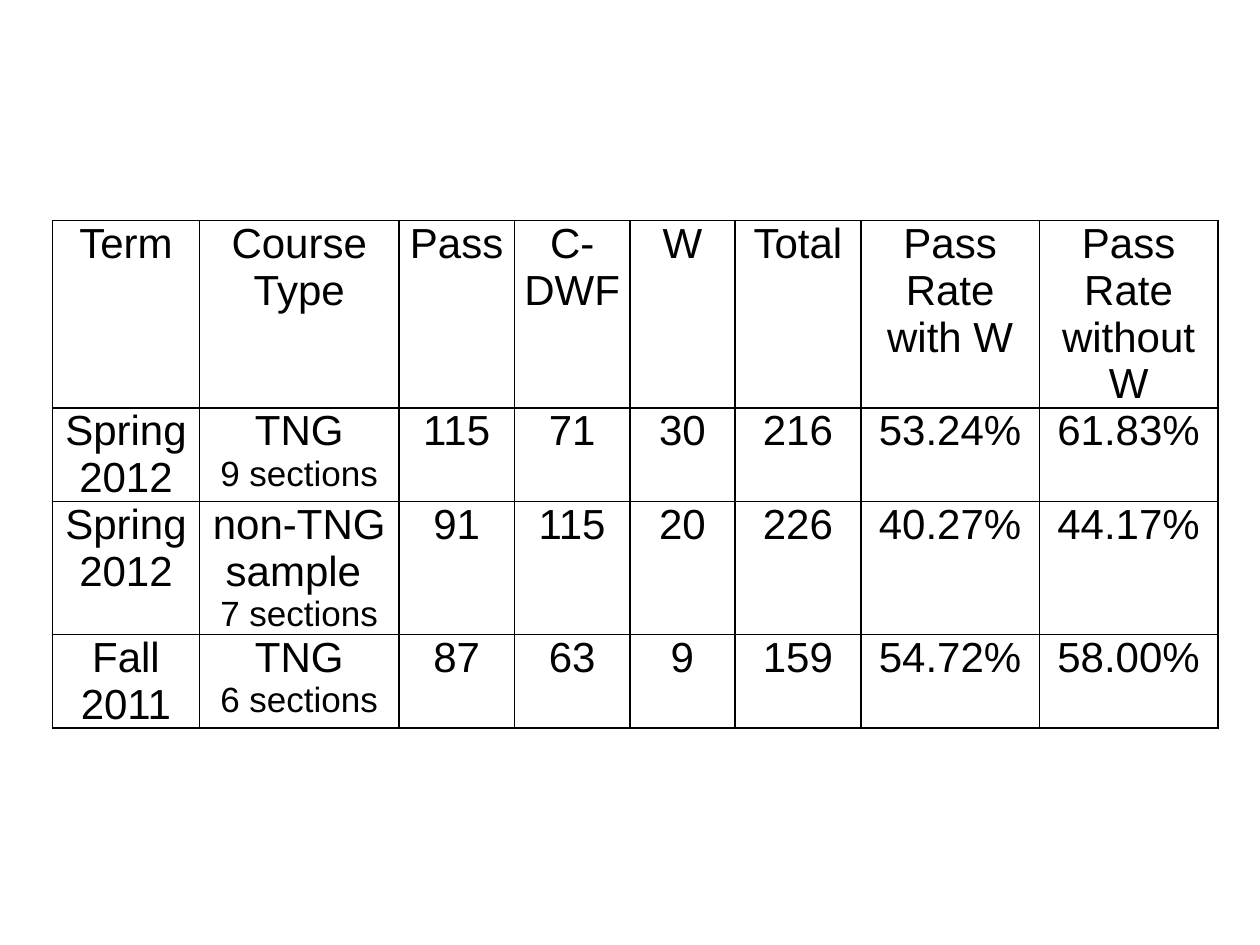
from dataclasses import dataclass

import pptx
import pptx.dml.color
import pptx.enum.text
import pptx.oxml
import pptx.oxml.ns
import pptx.table
import pptx.util
from pptx.util import Pt

COLORS = {"text": "000000", "border": "000000"}
FONT = "Arial"
BODY_SIZE = 24
SECTIONS_SIZE = 20
CELL_MARGIN = 5
BORDER_WIDTH = 1

COLUMN_WIDTHS = [84, 114, 66, 66, 60, 72, 102, 102]
ROW_HEIGHTS = [78, 42, 62.4, 42]
TABLE_LEFT, TABLE_TOP, TABLE_HEIGHT = 30, 126, 312

HEADINGS = ["Term", "Course Type", "Pass", "C-DWF", "W", "Total",
            "Pass Rate with W", "Pass Rate without W"]


@dataclass
class CourseResult:
    term: str
    course: str
    sections: str
    figures: list[str]
    same_paragraph: bool = False


RESULTS = [
    CourseResult("Spring 2012", "TNG", "9 sections",
                 ["115", "71", "30", "216", "53.24%", "61.83%"]),
    CourseResult("Spring 2012", "non-TNG sample ", "7 sections",
                 ["91", "115", "20", "226", "40.27%", "44.17%"], True),
    CourseResult("Fall 2011", "TNG", "6 sections",
                 ["87", "63", "9", "159", "54.72%", "58.00%"]),
]


def add_run(paragraph, text: str, size: float = BODY_SIZE) -> None:
    paragraph.alignment = pptx.enum.text.PP_ALIGN.CENTER
    run = paragraph.add_run()
    run.text = text
    run.font.name = FONT
    run.font.size = Pt(size)
    run.font.color.rgb = pptx.dml.color.RGBColor.from_string(COLORS["text"])


def format_cell(cell: pptx.table._Cell) -> None:
    """Set margins, borders on all four sides and no fill."""
    cell.margin_left = cell.margin_right = Pt(CELL_MARGIN)
    cell.margin_top = cell.margin_bottom = Pt(0)
    properties = cell._tc.get_or_add_tcPr()
    for side in ("lnL", "lnR", "lnT", "lnB"):
        properties.append(pptx.oxml.parse_xml(
            f'<a:{side} {pptx.oxml.ns.nsdecls("a")} w="{Pt(BORDER_WIDTH)}">'
            f'<a:solidFill><a:srgbClr val="{COLORS["border"]}"/></a:solidFill>'
            f'</a:{side}>'))
    cell.fill.background()


def fill_row(table: pptx.table.Table, row: int, texts: list[str]) -> None:
    for column, text in enumerate(texts):
        cell = table.cell(row, column)
        format_cell(cell)
        add_run(cell.text_frame.paragraphs[0], text)


def add_sections(cell: pptx.table._Cell, result: CourseResult) -> None:
    """Put the section count on its own line below the course type."""
    if result.same_paragraph:
        paragraph = cell.text_frame.paragraphs[0]
        paragraph.add_line_break()
    else:
        paragraph = cell.text_frame.add_paragraph()
    add_run(paragraph, result.sections, SECTIONS_SIZE)


def main() -> None:
    presentation = pptx.Presentation()
    presentation.slide_width, presentation.slide_height = Pt(720), Pt(540)
    slide = presentation.slides.add_slide(presentation.slide_layouts[6])

    frame = slide.shapes.add_table(
        len(ROW_HEIGHTS), len(COLUMN_WIDTHS), Pt(TABLE_LEFT), Pt(TABLE_TOP),
        Pt(sum(COLUMN_WIDTHS)), Pt(TABLE_HEIGHT))
    pass_rates = frame.table
    pass_rates.first_row = pass_rates.horz_banding = False
    for column, width in zip(pass_rates.columns, COLUMN_WIDTHS):
        column.width = Pt(width)
    for row, height in zip(pass_rates.rows, ROW_HEIGHTS):
        row.height = Pt(height)
    frame.height = Pt(TABLE_HEIGHT)

    fill_row(pass_rates, 0, HEADINGS)
    for row, result in enumerate(RESULTS, start=1):
        fill_row(pass_rates, row, [result.term, result.course, *result.figures])
        add_sections(pass_rates.cell(row, 1), result)

    presentation.save("out.pptx")


if __name__ == "__main__":
    main()
